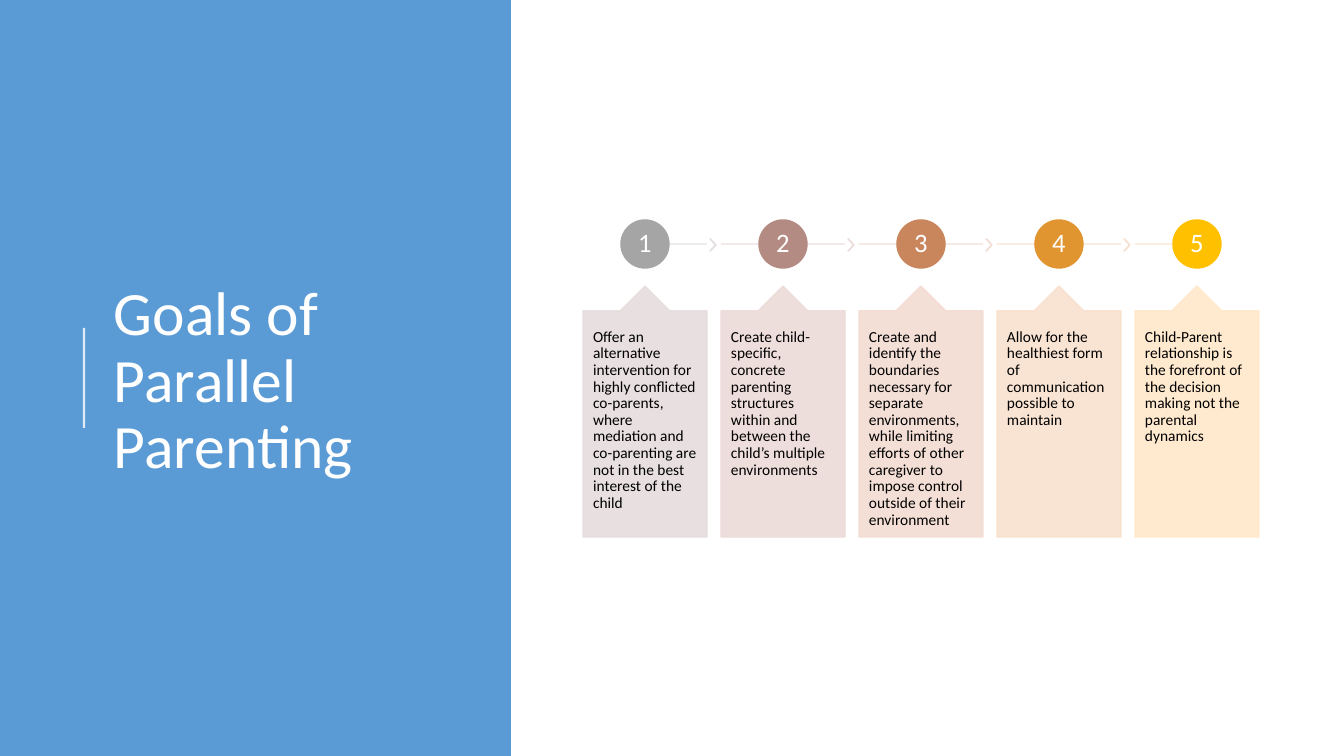
from dataclasses import dataclass

from lxml import etree
from pptx import Presentation
from pptx import util as u
from pptx.dml.color import RGBColor
from pptx.enum import shapes, text
from pptx.oxml.ns import qn

EMU_PER_PX = 914400 / 100.8
COLORS = {"panel": "5B9BD5", "white": "FFFFFF", "black": "000000"}

# Layout of the five steps, in px
STEP_LEFT, STEP_PITCH, STEP_WIDTH = 583, 138, 124
BADGE_TOP, BADGE_SIZE = 220, 48
CARD_TOP, CARD_HEIGHT = 286, 251
RULE_Y = BADGE_TOP + BADGE_SIZE // 2
CHEVRON_OFFSET, CHEVRON_TOP, CHEVRON_WIDTH, CHEVRON_HEIGHT = 127, 239, 6, 12


@dataclass(frozen=True)
class Step:
    goal: str
    badge: str
    card: str
    rule: str
    chevron: str = ""


STEPS = [
    Step("Offer an alternative intervention for highly conflicted co-parents, where "
         "mediation and co-parenting are not in the best interest of the child",
         "A5A5A5", "E6DDDD", "E1E1E1", "E3DFDF"),
    Step("Create child-specific, concrete parenting structures within and between "
         "the child’s multiple environments",
         "B48B83", "EDDBD8", "E8DDDB", "EADCDA"),
    Step("Create and identify the boundaries necessary for separate environments, while "
         "limiting efforts of other caregiver to impose control outside of their environment",
         "C9855C", "F3DCD3", "EFDCD6", "F1DCD5"),
    Step("Allow for the healthiest form of communication possible to maintain",
         "E19530", "F9E1CF", "F5DFD2", "F7E0D0"),
    Step("Child-Parent relationship is the forefront of the decision making not the "
         "parental dynamics",
         "FFC000", "FFE8CB", "FBE4CE"),
]


def px(length: int) -> u.Emu:
    return u.Emu(round(length * EMU_PER_PX))


def paint(fill, color: str, opacity: int = 100) -> None:
    fill.solid()
    fill.fore_color.rgb = RGBColor.from_string(color)
    if opacity < 100:
        for rgb in fill._xPr.iter(qn("a:srgbClr")):
            etree.SubElement(rgb, qn("a:alpha")).set("val", str(opacity * 1000))


def add_block(slide, kind, left: int, top: int, width: int, height: int, color: str,
              opacity: int = 100, adjust: tuple = (), outlined: bool = True):
    block = slide.shapes.add_shape(kind, px(left), px(top), px(width), px(height))
    block.shadow.inherit = False
    for index, value in enumerate(adjust):
        block.adjustments[index] = value
    paint(block.fill, color, opacity)
    if outlined:
        block.line.width = u.Pt(1)
        paint(block.line.fill, color, opacity)
    else:
        block.line.fill.background()
    return block


def add_rule(slide, x1: int, y1: int, x2: int, y2: int, color: str,
             width: float, opacity: int) -> None:
    rule = slide.shapes.add_connector(
        shapes.MSO_CONNECTOR.STRAIGHT, px(x1), px(y1), px(x2), px(y2))
    rule.line.width = u.Pt(width)
    paint(rule.line.fill, color, opacity)
    etree.SubElement(rule._element.spPr, qn("a:effectLst"))


def write(shape, words: str, *, size: int, color: str, align=text.PP_ALIGN.LEFT,
          anchor=text.MSO_ANCHOR.MIDDLE, inset_x: int = 10, inset_y: int = 5) -> None:
    frame = shape.text_frame
    frame.word_wrap = True
    frame.vertical_anchor = anchor
    frame.margin_left = frame.margin_right = px(inset_x)
    frame.margin_top = frame.margin_bottom = px(inset_y)
    paragraph = frame.paragraphs[0]
    paragraph.alignment = align
    paragraph.line_spacing = 0.9
    run = paragraph.add_run()
    run.text = words
    run.font.name = "Calibri"
    run.font.size = u.Pt(size)
    run.font.color.rgb = RGBColor.from_string(color)


def add_step(slide, number: int, step: Step) -> None:
    left = STEP_LEFT + (number - 1) * STEP_PITCH
    center = left + STEP_WIDTH // 2

    # Timeline: starts at the first badge and ends at the last
    rule_start = center if number == 1 else left
    rule_end = center if number == len(STEPS) else left + STEP_WIDTH
    add_rule(slide, rule_start, RULE_Y, rule_end, RULE_Y, step.rule, 1, 90)
    if step.chevron:
        add_block(slide, shapes.MSO_SHAPE.CHEVRON, left + CHEVRON_OFFSET, CHEVRON_TOP,
                  CHEVRON_WIDTH, CHEVRON_HEIGHT, step.chevron, 90, (0.9,))

    # Numbered badge
    badge = add_block(slide, shapes.MSO_SHAPE.OVAL, center - BADGE_SIZE // 2, BADGE_TOP,
                      BADGE_SIZE, BADGE_SIZE, step.badge)
    write(badge, str(number), size=19, color=COLORS["white"],
          align=text.PP_ALIGN.CENTER, inset_x=2, inset_y=2)

    # Goal card pointing up to its badge
    card = add_block(slide, shapes.MSO_SHAPE.UP_ARROW_CALLOUT, left, CARD_TOP,
                     STEP_WIDTH, CARD_HEIGHT, step.card, 90, (0.5, 0.2, 0.2, 1))
    write(card, step.goal, size=11, color=COLORS["black"],
          anchor=text.MSO_ANCHOR.TOP, inset_y=18)


def main() -> None:
    deck = Presentation()
    deck.slide_width, deck.slide_height = px(1344), px(756)
    slide = deck.slides.add_slide(deck.slide_layouts[6])

    # Title panel
    add_block(slide, shapes.MSO_SHAPE.RECTANGLE, 0, 0, 511, 756, COLORS["panel"],
              outlined=False)
    add_rule(slide, 84, 328, 84, 428, COLORS["white"], 1.5, 80)
    title = slide.shapes.add_textbox(px(104), px(79), px(372), px(607))
    write(title, "Goals of Parallel Parenting", size=44, color=COLORS["white"])

    # Five goals
    for number, step in enumerate(STEPS, start=1):
        add_step(slide, number, step)

    deck.save("out.pptx")


if __name__ == "__main__":
    main()
